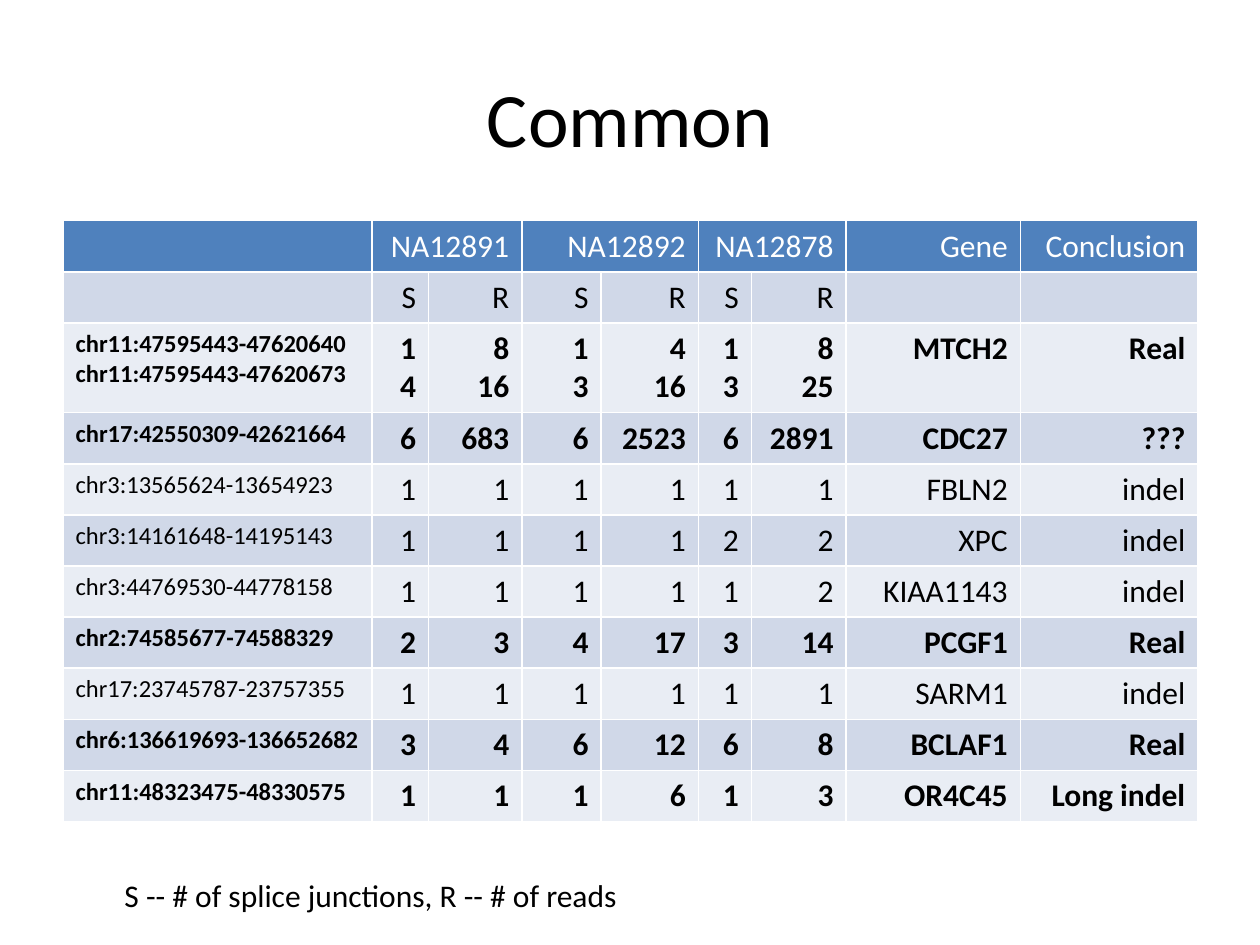
"""Build the slide listing splice junctions common to three samples."""
from dataclasses import dataclass

from pptx import Presentation
from pptx.dml.color import RGBColor
from pptx.enum.text import MSO_ANCHOR as Anchor, PP_ALIGN as Align
from pptx.util import Cm, Pt


@dataclass(frozen=True)
class Theme:
    """Fonts, colours and type sizes of the slide."""
    font: str = "Calibri"
    ink: str = "000000"
    header_ink: str = "FFFFFF"
    header_fill: str = "4F81BD"
    bands: tuple = ("E9EDF4", "D0D8E8")
    title_size: int = 44
    body_size: int = 18
    locus_size: int = 14


THEME = Theme()
COLUMN_WIDTHS = (6.23, 1.14, 1.88, 1.6, 1.96, 1.07, 1.91, 3.51, 3.58)
ROW_HEIGHT, TALL_ROW_HEIGHT = 1.03, 1.81
SAMPLE_COLUMNS = (1, 3, 5)
HEADER = ("", "NA12891", "", "NA12892", "", "NA12878", "", "Gene", "Conclusion")
MEASURES = ("", "S", "R", "S", "R", "S", "R", "", "")
JUNCTIONS = (
    ("chr11:47595443-47620640\nchr11:47595443-47620673",
     "1 4", "8\n16", "1\n3", "4\n16", "1\n3", "8\n25", "MTCH2", "Real"),
    ("chr17:42550309-42621664", "6", "683", "6", "2523", "6", "2891", "CDC27", "???"),
    ("chr3:13565624-13654923", "1", "1", "1", "1", "1", "1", "FBLN2", "indel"),
    ("chr3:14161648-14195143", "1", "1", "1", "1", "2", "2", "XPC", "indel"),
    ("chr3:44769530-44778158", "1", "1", "1", "1", "1", "2", "KIAA1143", "indel"),
    ("chr2:74585677-74588329", "2", "3", "4", "17", "3", "14", "PCGF1", "Real"),
    ("chr17:23745787-23757355", "1", "1", "1", "1", "1", "1", "SARM1", "indel"),
    ("chr6:136619693-136652682", "3", "4", "6", "12", "6", "8", "BCLAF1", "Real"),
    ("chr11:48323475-48330575", "1", "1", "1", "6", "1", "3", "OR4C45", "Long indel"),
)


def write_text(frame, text, size, color=THEME.ink, align=Align.LEFT, bold=False):
    """Fill a text frame with one paragraph per line of text."""
    frame.text = text
    font_format = {"name": THEME.font, "size": Pt(size), "bold": bold}
    for paragraph in frame.paragraphs:
        paragraph.alignment = align
        for name, value in font_format.items():
            setattr(paragraph.font, name, value)
        paragraph.font.color.rgb = RGBColor.from_string(color)


def place(shape, left, top, width, height):
    """Position a shape in centimetres."""
    bounds = {"left": left, "top": top, "width": width, "height": height}
    for name, value in bounds.items():
        setattr(shape, name, Cm(value))


def add_title(slide, text):
    """Write the centred slide title."""
    title = slide.shapes.title
    place(title, 1.27, 0.76, 22.86, 3.18)
    title.text_frame.vertical_anchor = Anchor.MIDDLE
    write_text(title.text_frame, text, THEME.title_size, align=Align.CENTER)


def fill_row(table, index, texts, fill, color=THEME.ink, bold=False):
    """Write one table row with its locus on the left and the rest on the right."""
    for column, text in enumerate(texts):
        cell = table.cell(index, column)
        cell.fill.solid()
        cell.fill.fore_color.rgb = RGBColor.from_string(fill)
        is_locus = column == 0 and text
        size = THEME.locus_size if is_locus else THEME.body_size
        align = Align.LEFT if is_locus else Align.RIGHT
        write_text(cell.text_frame, text, size, color, align, bold)


def add_junction_table(slide):
    """Add the table of junctions with paired columns for each sample."""
    rows = (MEASURES, *JUNCTIONS)
    heights = [TALL_ROW_HEIGHT if "\n" in row[0] else ROW_HEIGHT
               for row in (HEADER, *rows)]
    table = slide.shapes.add_table(
        len(heights), len(COLUMN_WIDTHS), Cm(1.27), Cm(4.45),
        Cm(sum(COLUMN_WIDTHS)), Cm(sum(heights))).table
    for column, width in zip(table.columns, COLUMN_WIDTHS):
        column.width = Cm(width)
    for row, height in zip(table.rows, heights):
        row.height = Cm(height)
    fill_row(table, 0, HEADER, THEME.header_fill, THEME.header_ink)
    for index, texts in enumerate(rows, start=1):
        bold = texts[-1] not in ("", "indel")
        fill_row(table, index, texts, THEME.bands[index % 2], bold=bold)
    for column in SAMPLE_COLUMNS:
        table.cell(0, column).merge(table.cell(0, column + 1))


def add_legend(slide, text):
    """Add the note that explains the column letters."""
    legend = slide.shapes.add_textbox(Cm(2.26), Cm(17.53), Cm(10.54), Cm(1.02))
    legend.text_frame.word_wrap = False
    write_text(legend.text_frame, text, THEME.body_size)


def main():
    """Build and save the presentation."""
    presentation = Presentation()
    presentation.slide_width = Cm(25.4)
    presentation.slide_height = Cm(19.05)
    slide = presentation.slides.add_slide(
        presentation.slide_layouts.get_by_name("Title Only"))
    add_title(slide, "Common")
    add_junction_table(slide)
    add_legend(slide, "S -- # of splice junctions, R -- # of reads")
    presentation.save("out.pptx")


if __name__ == "__main__":
    main()
